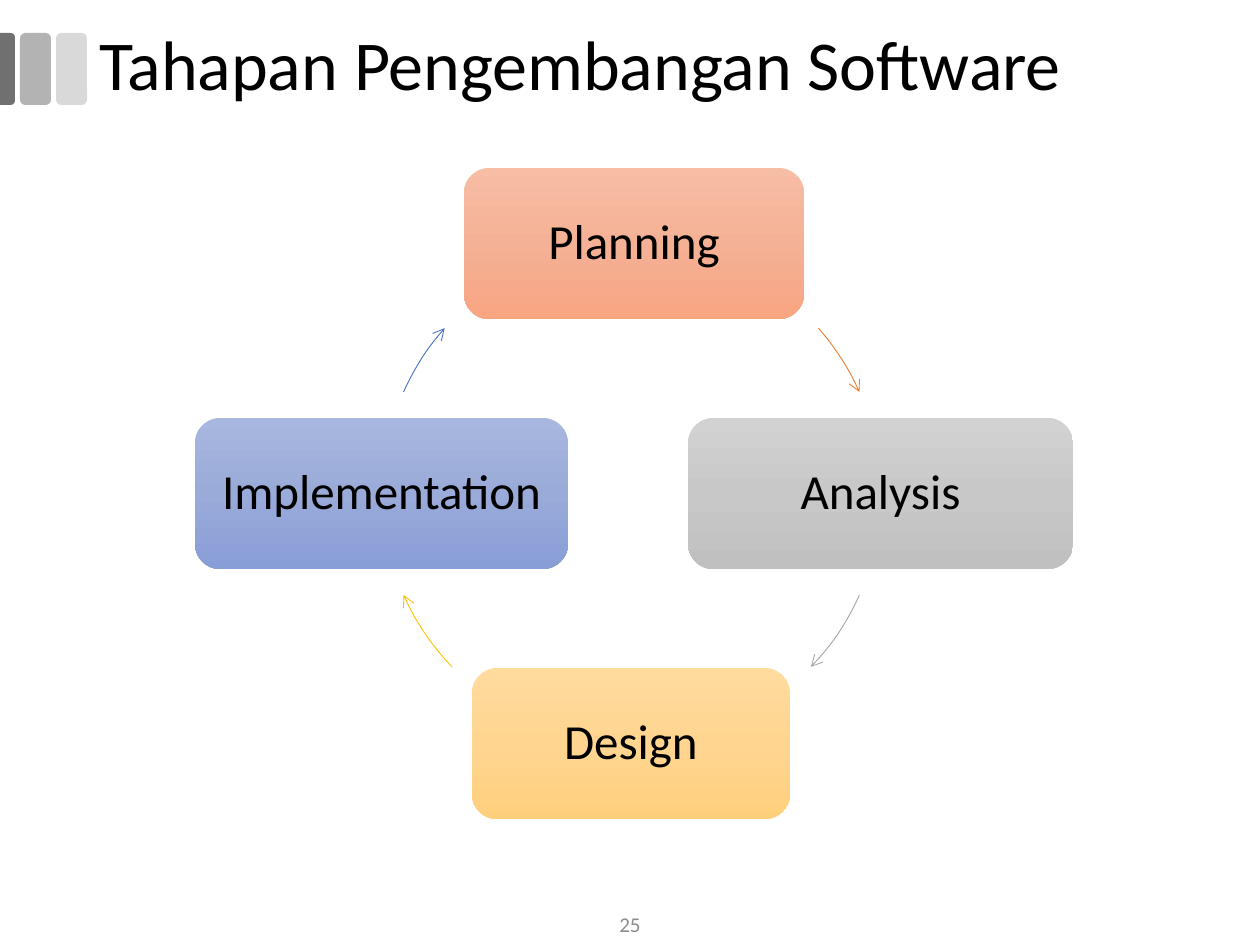
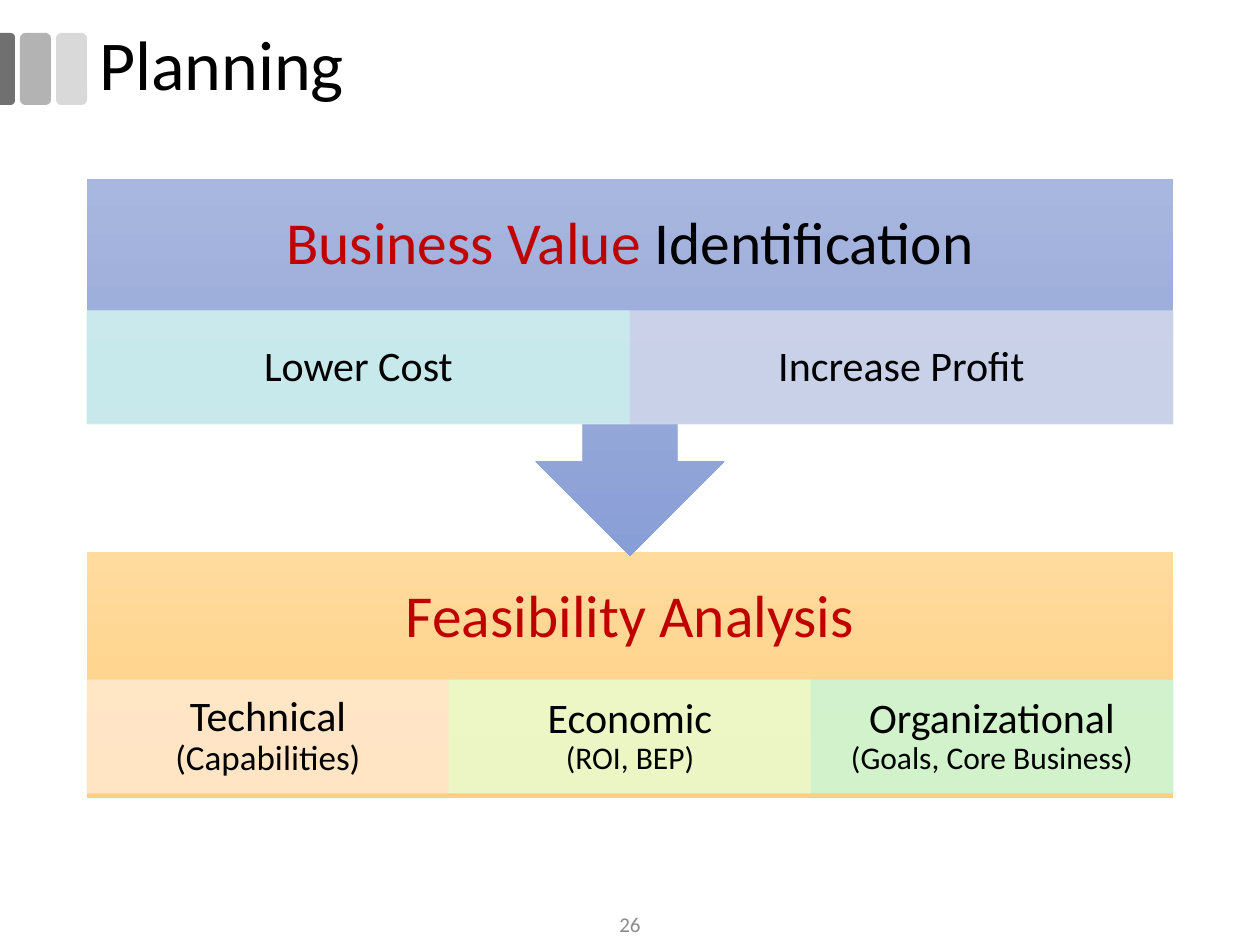
from copy import deepcopy
from dataclasses import dataclass

from lxml.etree import SubElement
from pptx import Presentation
from pptx.dml.color import RGBColor
from pptx.enum.shapes import MSO_SHAPE
from pptx.enum.text import MSO_ANCHOR, MSO_AUTO_SIZE, PP_ALIGN
from pptx.oxml.ns import qn
from pptx.util import Emu, Pt

EMU_PER_PX = 914400 / 126
ADJUSTMENT_PER_DEGREE = 0.6


@dataclass(frozen=True)
class Theme:
    font: str = "Calibri"
    text: str = "000000"
    accent: str = "C00000"
    muted: str = "8C8C8C"
    bars: tuple = ("707070", "B3B3B3", "D9D9D9")
    orange: tuple = ("F7BDA5", "F5B196", "F8A582")
    grey: tuple = ("D2D2D2", "C8C8C8", "C0C0C0")
    gold: tuple = ("FFDB9E", "FFD590", "FFD07C")
    blue: tuple = ("A8B7DF", "9AABD9", "889ED7")
    arrows: tuple = ("ED7D31", "A5A5A5", "FFC000", "4472C4")
    value_cells: tuple = ("CEF0EF", "CFD6EA")
    study_cells: tuple = ("FFE8CC", "EAFBCC", "CCF6D3")
    title_size: int = 40
    heading_size: int = 34
    stage_size: int = 28
    cell_size: int = 24
    number_size: int = 12
    line_spacing: float = 0.9
    hairline: float = 0.5


THEME = Theme()


def px(length):
    return Emu(round(length * EMU_PER_PX))


def apply_format(target, values):
    for name, value in values.items():
        setattr(target, name, value)


def place(shape, box):
    apply_format(shape, dict(zip(("left", "top", "width", "height"), map(px, box))))


def write_text(shape, lines, align=PP_ALIGN.CENTER, spacing=THEME.line_spacing, insets=(12, 6, 12, 6)):
    frame = shape.text_frame
    margins = ("margin_left", "margin_top", "margin_right", "margin_bottom")
    apply_format(frame, {
        "word_wrap": True,
        "auto_size": MSO_AUTO_SIZE.NONE,
        "vertical_anchor": MSO_ANCHOR.MIDDLE,
        **dict(zip(margins, map(px, insets))),
    })
    para = frame.paragraphs[0]
    apply_format(para, {"alignment": align, "line_spacing": spacing})
    for index, line in enumerate(lines):
        if index:
            para.add_line_break()
        for words, size, color in line:
            span = para.add_run()
            span.text = words
            apply_format(span.font, {"name": THEME.font, "size": Pt(size)})
            span.font.color.rgb = RGBColor.from_string(color)


def set_line(shape, color):
    shape.line.color.rgb = RGBColor.from_string(color)
    shape.line.width = Pt(THEME.hairline)


def add_block(page, kind, box, color):
    shape = page.shapes.add_shape(kind, *map(px, box))
    shape.shadow.inherit = False
    shape.line.fill.background()
    if isinstance(color, tuple):
        fill_gradient(shape, color)
    else:
        shape.fill.solid()
        shape.fill.fore_color.rgb = RGBColor.from_string(color)
    return shape


def fill_gradient(shape, colors):
    shape.fill.gradient()
    shape.fill.gradient_angle = 270
    stop_list = shape.element.spPr.find(qn("a:gradFill")).find(qn("a:gsLst"))
    while len(stop_list) < len(colors):
        stop_list.append(deepcopy(stop_list[0]))
    for index, (stop, color) in enumerate(zip(shape.fill.gradient_stops, colors)):
        stop.position = index / (len(colors) - 1)
        stop.color.rgb = RGBColor.from_string(color)


def add_title_bars(page, box):
    left, top, width, height = box
    pitch, half = 36, 15
    dark, *others = THEME.bars
    edge_box = (left + (half - height) / 2, top + (height - half) / 2, height, half)
    edge = add_block(page, MSO_SHAPE.ROUND_2_SAME_RECTANGLE, edge_box, dark)
    edge.rotation = 90
    edge.adjustments[0] = 0.29
    for index, color in enumerate(others):
        bar_box = (left + 20 + index * pitch, top, width, height)
        add_block(page, MSO_SHAPE.ROUNDED_RECTANGLE, bar_box, color)


def add_page(deck, title, number):
    page = deck.slides.add_slide(deck.slide_layouts[5])
    place(page.shapes.title, (87, 20, 1172, 95))
    write_text(page.shapes.title, [[(title, THEME.title_size, THEME.text)]], PP_ALIGN.LEFT)
    add_title_bars(page, (0, 33, 31, 72))
    number_box = page.shapes.add_textbox(*map(px, (488, 903, 284, 42)))
    write_text(number_box, [[(str(number), THEME.number_size, THEME.muted)]], spacing=1.0)
    return page


def add_cycle_arrow(page, box, angles, color):
    arrow = page.shapes.add_shape(MSO_SHAPE.ARC, *map(px, box))
    arrow.shadow.inherit = False
    arrow.fill.background()
    for index, angle in enumerate(angles):
        arrow.adjustments[index] = angle * ADJUSTMENT_PER_DEGREE
    set_line(arrow, color)
    SubElement(arrow.element.spPr.find(qn("a:ln")), qn("a:tailEnd"), type="arrow")


def add_cycle(page, box):
    left, top, width, height = box
    stage_height = 151
    row_pitch = (height - stage_height) / 2
    stages = (
        ("Planning", 269, 0, 340, THEME.orange),
        ("Analysis", 493, 1, 385, THEME.grey),
        ("Design", 277, 2, 318, THEME.gold),
        ("Implementation", 0, 1, 373, THEME.blue),
    )
    spans = ((318.5, 336), (24, 44), (136, 156), (204, 221.5))
    circle_box = (left + 187, top + 76, 499, 499)
    for (name, offset, row, stage_width, colors), angles, color in zip(stages, spans, THEME.arrows):
        stage_box = (left + offset, top + row * row_pitch, stage_width, stage_height)
        stage = add_block(page, MSO_SHAPE.ROUNDED_RECTANGLE, stage_box, colors)
        write_text(stage, [[(name, THEME.stage_size, THEME.text)]], insets=(15, 15, 15, 15))
        add_cycle_arrow(page, circle_box, angles, color)


def add_cell(page, box, lines, color):
    cell = add_block(page, MSO_SHAPE.RECTANGLE, box, color)
    set_line(cell, color)
    for tint in cell.element.spPr.iter(qn("a:srgbClr")):
        SubElement(tint, qn("a:alpha"), val="90000")
    write_text(cell, [[(words, size, THEME.text)] for words, size in lines], insets=(24, 4, 24, 4))


def add_panel(page, box, kind, colors, heading, cells, cell_colors, cell_top):
    left, top, width, _ = box
    panel = add_block(page, kind, box, colors)
    spans = [(words, THEME.heading_size, color) for words, color in heading]
    write_text(panel, [spans], insets=(33, 10, 33, 123))
    cell_width = width / len(cells)
    for index, (lines, color) in enumerate(zip(cells, cell_colors)):
        add_cell(page, (left + index * cell_width, top + cell_top, cell_width, 113), lines, color)


def add_planning(page, box):
    left, top, width, height = box
    size = THEME.cell_size
    add_panel(
        page, (left, top + 373, width, height - 373), MSO_SHAPE.RECTANGLE, THEME.gold,
        [("Feasibility Analysis", THEME.accent)],
        [
            [("Technical", size), ("(Capabilities)", 20)],
            [("Economic", size), ("(ROI, BEP)", 18)],
            [("Organizational", size), ("(Goals, Core Business)", 18)],
        ],
        THEME.study_cells, 128,
    )
    add_panel(
        page, (left, top, width, 377), MSO_SHAPE.DOWN_ARROW_CALLOUT, THEME.blue,
        [("Business Value ", THEME.accent), ("Identification", THEME.text)],
        [[("Lower Cost", size)], [("Increase Profit", size)]],
        THEME.value_cells, 132,
    )


def main():
    deck = Presentation()
    apply_format(deck, {"slide_width": px(1260), "slide_height": px(945)})
    pages = (
        ("Tahapan Pengembangan Software", add_cycle, (195, 168, 878, 651)),
        ("Planning", add_planning, (87, 179, 1086, 619)),
    )
    for number, (title, add_content, box) in enumerate(pages, start=25):
        add_content(add_page(deck, title, number), box)
    deck.save("out.pptx")


if __name__ == "__main__":
    main()
